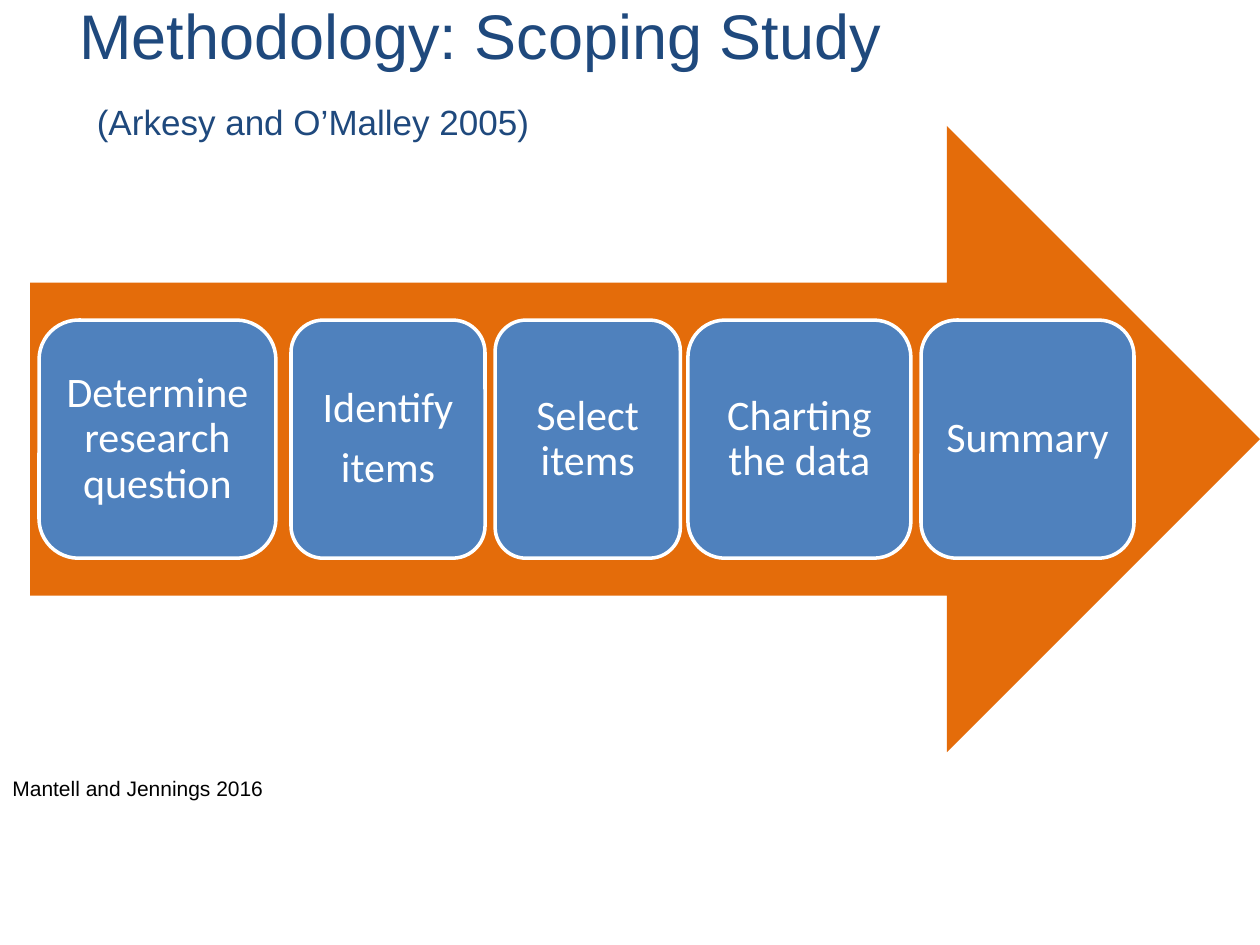
from pptx import Presentation
from pptx import util as u
from pptx.dml.color import RGBColor
from pptx.enum import shapes, text

TITLE = "Methodology: Scoping Study"
CITATION = "(Arkesy and O’Malley 2005)"
FOOTER = "Mantell and Jennings 2016"
# paragraphs, left, width (inches)
STEPS = [
    (["Determine research question"], 0.31, 1.88),
    (["Identify", "items"], 2.31, 1.54),
    (["Select items"], 3.93, 1.47),
    (["Charting the data"], 5.46, 1.77),
    (["Summary"], 7.31, 1.69),
]
COLORS = {"title": "1F497D", "arrow": "E46C0A", "step": "4F81BD",
          "white": "FFFFFF", "black": "000000"}
ARROW = (0.24, 1, 9.76, 4.97)
STEP_HEIGHT = 1.89


def rgb(name):
    return RGBColor.from_string(COLORS[name])


def set_font(font, face, size, color):
    font.name, font.size, font.color.rgb = face, u.Pt(size), rgb(color)


def add_text(slide, box, margins, anchor):
    frame = slide.shapes.add_textbox(*map(u.Inches, box)).text_frame
    frame.word_wrap = True
    frame.vertical_anchor = anchor
    frame.margin_left = frame.margin_right = u.Inches(margins[0])
    frame.margin_top = frame.margin_bottom = u.Inches(margins[1])
    return frame


def add_block(slide, preset, box, fill):
    block = slide.shapes.add_shape(preset, *map(u.Inches, box))
    block.shadow.inherit = False
    block.fill.solid()
    block.fill.fore_color.rgb = rgb(fill)
    block.line.fill.background()
    return block


def add_step(slide, lines, left, width):
    """Rounded box centred on the arrow's axis."""
    top = ARROW[1] + (ARROW[3] - STEP_HEIGHT) / 2
    step = add_block(slide, shapes.MSO_SHAPE.ROUNDED_RECTANGLE,
                     (left, top, width, STEP_HEIGHT), "step")
    step.line.color.rgb = rgb("white")
    step.line.width = u.Pt(2)
    frame = step.text_frame
    frame.word_wrap = True
    frame.vertical_anchor = text.MSO_ANCHOR.MIDDLE
    frame.margin_left = frame.margin_right = u.Inches(0.1)
    frame.margin_top = frame.margin_bottom = u.Inches(0.1)
    frame.text = "\n".join(lines)
    for paragraph in frame.paragraphs:
        paragraph.alignment = text.PP_ALIGN.CENTER
        paragraph.line_spacing = 0.9
        paragraph.space_after = u.Pt(8.4)
        set_font(paragraph.font, "Calibri", 24, "white")


def add_title(slide):
    frame = add_text(slide, (0.5, 0.3, 9, 0.55), (0.13, 0.07),
                     text.MSO_ANCHOR.MIDDLE)
    heading = frame.paragraphs[0]
    set_font(heading.font, "Arial", 36, "title")
    heading.add_run().text = TITLE
    heading.add_line_break()
    # The full-size space keeps the second line as tall as the first
    for words, size in ((" ", 36), (CITATION, 20)):
        run = heading.add_run()
        run.text = words
        run.font.size = u.Pt(size)


def main():
    prs = Presentation()
    prs.slide_width, prs.slide_height = u.Inches(10), u.Inches(7.5)
    slide = prs.slides.add_slide(prs.slide_layouts[6])

    add_title(slide)
    add_block(slide, shapes.MSO_SHAPE.RIGHT_ARROW, ARROW, "arrow")
    for step in STEPS:
        add_step(slide, *step)

    footer = add_text(slide, (0, 6.11, 4.72, 0.3), (0.1, 0.05),
                      text.MSO_ANCHOR.TOP)
    footer.text = FOOTER
    set_font(footer.paragraphs[0].font, "Arial", 12, "black")

    prs.save("out.pptx")


if __name__ == "__main__":
    main()
